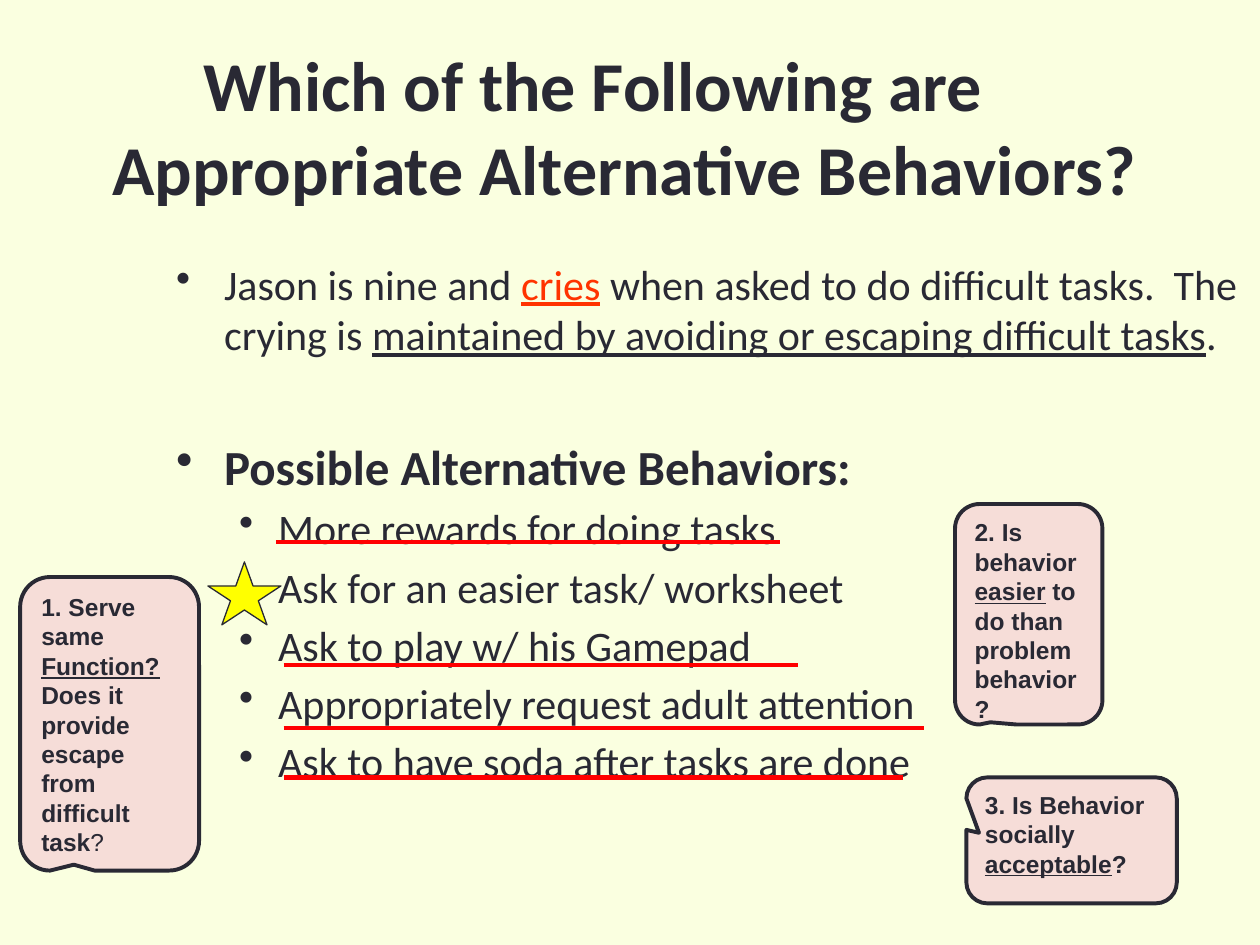
from dataclasses import dataclass

from pptx import Presentation
from pptx.dml.color import RGBColor
from pptx.enum.shapes import MSO_CONNECTOR as Connector, MSO_SHAPE as Shape
from pptx.enum.text import MSO_ANCHOR as Anchor, PP_ALIGN as Align
from pptx.oxml.ns import qn
from pptx.util import Inches, Pt

INK, CREAM, PINK = "292934", "FAFFE0", "F6DDD8"
RED, ORANGE, YELLOW = "FF0000", "FF3300", "FFFF00"


@dataclass
class Span:
    text: str
    underline: bool = False
    bold: bool | None = None
    color: str | None = None


@dataclass
class Item:
    spans: list[Span]
    size: int = 24
    bold: bool = False
    margin: float = 0.81
    hang: float = 0.31
    before: float = 4.5


@dataclass
class Callout:
    box: tuple[float, float, float, float]
    tail: tuple[float, float]
    spans: list[Span]


@dataclass
class Strike:
    left: float
    right: float
    y: float


ITEMS = [
    Item([Span("Jason is nine and "), Span("cries", True, color=ORANGE),
          Span(" when asked to do difficult tasks.  The crying is "),
          Span("maintained by avoiding or escaping difficult tasks", True),
          Span(".")], margin=0.38, hang=0.38),
    Item([Span("Possible Alternative Behaviors:")], 28, True, 0.38, 0.38, 44),
    Item([Span("More rewards for doing tasks")]),
    Item([Span("Ask for an easier task/ worksheet")]),
    Item([Span("Ask to play w/ his Gamepad")]),
    Item([Span("Appropriately request adult attention")]),
    Item([Span("Ask to have soda after tasks are done")]),
]
CALLOUTS = [
    Callout((0.16, 4.58, 1.42, 2.33), (-0.2, 0.48),
            [Span("1. Serve same "), Span("Function?", True),
             Span(" Does it provide escape from difficult task"),
             Span("?", bold=False)]),
    Callout((7.58, 4, 1.17, 1.75), (-0.26, 0.49),
            [Span("2. Is behavior "), Span("easier", True),
             Span(" to do than problem behavior?")]),
    Callout((7.67, 6.17, 1.67, 1), (-0.44, -0.06),
            [Span("3. Is Behavior socially "), Span("acceptable", True),
             Span("?")]),
]
STRIKES = [Strike(2.19, 6.19, 4.3), Strike(2.25, 6.33, 5.28),
           Strike(2.25, 7.33, 5.78), Strike(2.25, 7.17, 6.17)]


def rgb(color: str) -> RGBColor:
    return RGBColor.from_string(color)


def set_font(para, name: str, size: float, bold: bool) -> None:
    para.font.name, para.font.size, para.font.bold = name, Pt(size), bold
    para.font.color.rgb = rgb(INK)


def set_indent(para, margin: float, hang: float) -> None:
    properties = para._p.get_or_add_pPr()
    properties.set("marL", str(Inches(margin)))
    properties.set("indent", str(-Inches(hang)))


def add_spans(para, spans: list[Span]) -> None:
    for span in spans:
        run = para.add_run()
        run.text = span.text
        if span.underline:
            run.font.underline = True
        if span.bold is not None:
            run.font.bold = span.bold
        if span.color:
            run.font.color.rgb = rgb(span.color)


def add_title(page, first: str, second: str) -> None:
    frame = page.shapes.add_textbox(
        Inches(0.16), Inches(0.33), Inches(9.59), Inches(1.33)).text_frame
    frame.word_wrap, frame.vertical_anchor = True, Anchor.MIDDLE
    # The hanging indent moves the first line left; the inset keeps the second centred
    shift = 0.5
    frame.margin_right = Inches(0.1 + shift)
    para = frame.paragraphs[0]
    para.alignment = Align.CENTER
    set_indent(para, shift, shift)
    set_font(para, "Calibri", 40, True)
    para.text = f"{first}\v{second}"


def add_list(page, items: list[Item]) -> None:
    frame = page.shapes.add_textbox(
        Inches(1.3), Inches(2), Inches(8.7), Inches(5.25)).text_frame
    frame.word_wrap = True
    for index, item in enumerate(items):
        para = frame.add_paragraph() if index else frame.paragraphs[0]
        para.space_before = Pt(item.before)
        set_indent(para, item.margin, item.hang)
        set_font(para, "Calibri", item.size, item.bold)
        properties = para._p.get_or_add_pPr()
        bullet = properties.makeelement(qn("a:buChar"), {"char": "•"})
        properties.find(qn("a:defRPr")).addprevious(bullet)
        add_spans(para, item.spans)


def add_shape(page, kind, box: tuple[float, float, float, float],
              fill: str, width: float):
    shape = page.shapes.add_shape(kind, *map(Inches, box))
    shape.shadow.inherit = False
    shape.fill.solid()
    shape.fill.fore_color.rgb = rgb(fill)
    shape.line.color.rgb = rgb(INK)
    shape.line.width = Pt(width)
    return shape


def add_callout(page, callout: Callout) -> None:
    shape = add_shape(page, Shape.ROUNDED_RECTANGULAR_CALLOUT,
                      callout.box, PINK, 2.25)
    shape.adjustments[0], shape.adjustments[1] = callout.tail
    frame = shape.text_frame
    frame.word_wrap, frame.vertical_anchor = True, Anchor.TOP
    para = frame.paragraphs[0]
    para.alignment = Align.LEFT
    set_font(para, "Arial", 14, True)
    add_spans(para, callout.spans)


def add_strike(page, strike: Strike) -> None:
    line = page.shapes.add_connector(
        Connector.STRAIGHT, Inches(strike.left), Inches(strike.y),
        Inches(strike.right), Inches(strike.y))
    line.line.color.rgb = rgb(RED)
    line.line.width = Pt(2.5)
    properties = line._element.spPr
    properties.append(properties.makeelement(qn("a:effectLst"), {}))


def main() -> None:
    deck = Presentation()
    deck.slide_width, deck.slide_height = Inches(10), Inches(7.5)
    page = deck.slides.add_slide(deck.slide_layouts[6])
    page.background.fill.solid()
    page.background.fill.fore_color.rgb = rgb(CREAM)

    # Title and list
    add_title(page, "Which of the Following are",
              "Appropriate Alternative Behaviors?")
    add_list(page, ITEMS)

    # Questions to ask of each behavior
    for callout in CALLOUTS:
        add_callout(page, callout)

    # Rejected answers struck out, the right one starred
    for strike in STRIKES:
        add_strike(page, strike)
    add_shape(page, Shape.STAR_5_POINT, (1.65, 4.46, 0.58, 0.5), YELLOW, 0.75)

    deck.save("out.pptx")


if __name__ == "__main__":
    main()
